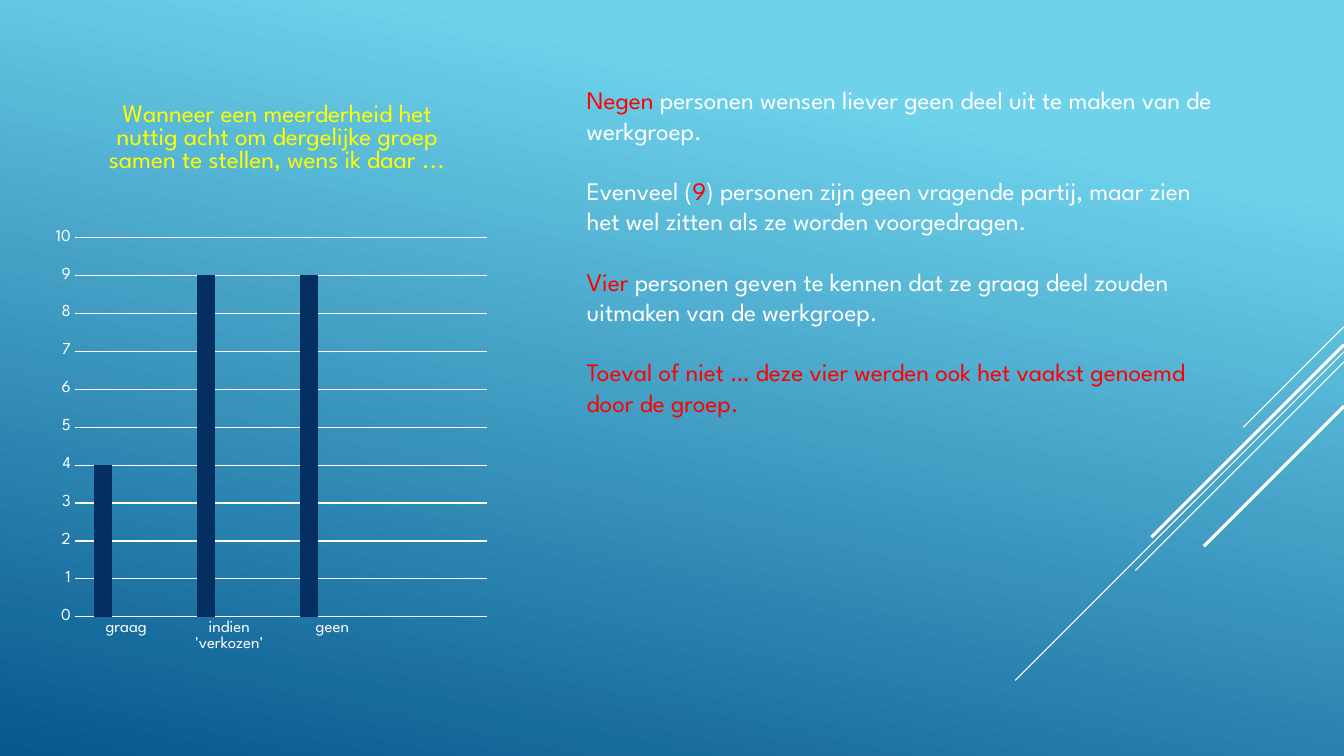
import dataclasses

import lxml.etree
import pptx
import pptx.chart.data
import pptx.dml.color
import pptx.enum.chart
import pptx.enum.text
import pptx.oxml
import pptx.oxml.ns
import pptx.util

Inches = pptx.util.Inches
Pt = pptx.util.Pt
qn = pptx.oxml.ns.qn


@dataclasses.dataclass(frozen=True)
class Theme:
    font: str = "League Spartan"
    sky: str = "6ED2EB"
    deep: str = "06588E"
    white: str = "FFFFFF"
    title: str = "FFFF00"
    accent: str = "FF0000"
    bars: tuple = ("052F61", "A50E82", "14967C")
    body_size: float = 18
    title_size: float = 18
    axis_size: float = 12
    thin: float = 0.75
    thick: float = 2.25


THEME = Theme()
SLIDE_WIDTH, SLIDE_HEIGHT = 13.33, 7.5
# height at the right edge, horizontal reach, line width
RAYS = [
    (3.24, 1.0, THEME.thin),
    (3.49, 3.26, THEME.thin),
    (3.59, 2.07, THEME.thin),
    (3.42, 1.91, THEME.thick),
    (4.03, 1.39, THEME.thick),
]
QUESTION = ("Wanneer een meerderheid het nuttig acht om dergelijke groep "
            "samen te stellen, wens ik daar ...")
ANSWERS = {"graag": 4, "indien 'verkozen'": 9, "geen": 9, "": None}
# each paragraph is a list of (text, is highlighted)
FINDINGS = [
    [("Negen", True),
     (" personen wensen liever geen deel uit te maken van de werkgroep.", False)],
    [("Evenveel (", False), ("9", True),
     (") personen zijn geen vragende partij, maar zien het wel zitten "
      "als ze worden voorgedragen.", False)],
    [("Vier", True),
     (" personen geven te kennen dat ze graag deel zouden uitmaken "
      "van de werkgroep.", False)],
    [("Toeval of niet … deze vier werden ook het vaakst genoemd "
      "door de groep.", True)],
]


def rgb(color):
    return pptx.dml.color.RGBColor.from_string(color)


def style_font(font, size, color):
    font.name = THEME.font
    font.size = Pt(size)
    font.bold = False
    font.color.rgb = rgb(color)


def style_line(line, width=THEME.thin):
    line.color.rgb = rgb(THEME.white)
    line.width = Pt(width)


def paint_background(slide):
    fill = slide.background.fill
    fill.gradient()
    # gradient_angle runs counter-clockwise
    fill.gradient_angle = 360 - 102
    for stop, position, color in zip(fill.gradient_stops, (0.19, 1),
                                     (THEME.sky, THEME.deep)):
        stop.position = position
        stop.color.rgb = rgb(color)


def draw_rays(slide, right):
    """Draw 45-degree lines running down and left from the right edge."""
    for top, reach, width in RAYS:
        ray = slide.shapes.add_connector(
            pptx.enum.shapes.MSO_CONNECTOR.STRAIGHT,
            Inches(right), Inches(top), Inches(right - reach), Inches(top + reach))
        style_line(ray.line, width)
        lxml.etree.SubElement(ray._element.spPr, qn("a:effectLst"))


def set_layout(parent, **settings):
    """Give a chart title or plot area a manual layout."""
    for old in parent.findall(qn("c:layout")):
        parent.remove(old)
    layout = lxml.etree.Element(qn("c:layout"))
    manual = lxml.etree.SubElement(layout, qn("c:manualLayout"))
    for name, value in settings.items():
        lxml.etree.SubElement(manual, qn(f"c:{name}")).set("val", str(value))
    text = parent.find(qn("c:tx"))
    parent.insert(0 if text is None else 1, layout)


def add_answer_chart(slide, left, top, width, height):
    chart_data = pptx.chart.data.CategoryChartData()
    chart_data.categories = list(ANSWERS)
    chart_data.add_series("Series 1", list(ANSWERS.values()))
    for name in ("Series 2", "Series 3"):
        chart_data.add_series(name, [None] * len(ANSWERS))
    chart = slide.shapes.add_chart(
        pptx.enum.chart.XL_CHART_TYPE.COLUMN_CLUSTERED,
        Inches(left), Inches(top), Inches(width), Inches(height), chart_data).chart
    style_font(chart.font, THEME.axis_size, THEME.white)
    chart.has_legend = False

    chart.has_title = True
    question = chart.chart_title.text_frame
    question.text = QUESTION
    style_font(question.paragraphs[0].runs[0].font, THEME.title_size, THEME.title)
    chart.chart_title.include_in_layout = False

    plot = chart.plots[0]
    plot.gap_width = 219
    plot.overlap = -27
    plot.vary_by_categories = False
    for series, color in zip(plot.series, THEME.bars):
        series.format.fill.solid()
        series.format.fill.fore_color.rgb = rgb(color)
    set_layout(chart._chartSpace.chart.plotArea, layoutTarget="inner",
               xMode="edge", yMode="edge", x=0.078, y=0.264, w=0.859, h=0.635)

    for axis in (chart.category_axis, chart.value_axis):
        axis.major_tick_mark = pptx.enum.chart.XL_TICK_MARK.NONE
        axis.minor_tick_mark = pptx.enum.chart.XL_TICK_MARK.NONE
        style_font(axis.tick_labels.font, THEME.axis_size, THEME.white)
    style_line(chart.category_axis.format.line)
    scale = chart.value_axis
    scale.minimum_scale, scale.maximum_scale, scale.major_unit = 0, 10, 1
    scale.format.line.fill.background()
    style_line(scale.major_gridlines.format.line)


def add_findings(slide, left, top, width, height):
    frame = slide.shapes.add_textbox(
        Inches(left), Inches(top), Inches(width), Inches(height)).text_frame
    frame.word_wrap = True
    frame.auto_size = pptx.enum.text.MSO_AUTO_SIZE.SHAPE_TO_FIT_TEXT
    line_height = Pt(THEME.body_size * 1.2)
    for index, finding in enumerate(FINDINGS):
        paragraph = frame.paragraphs[0] if index == 0 else frame.add_paragraph()
        paragraph.line_spacing = line_height
        paragraph.space_before = line_height if index else 0
        for text, highlighted in finding:
            run = paragraph.add_run()
            run.text = text
            style_font(run.font, THEME.body_size,
                       THEME.accent if highlighted else THEME.white)


def main():
    presentation = pptx.Presentation()
    presentation.slide_width = Inches(SLIDE_WIDTH)
    presentation.slide_height = Inches(SLIDE_HEIGHT)
    slide = presentation.slides.add_slide(presentation.slide_layouts[6])
    paint_background(slide)
    draw_rays(slide, SLIDE_WIDTH)
    add_answer_chart(slide, 0.37, 0.79, 4.76, 5.93)
    add_findings(slide, 5.72, 0.79, 6.56, 3.74)
    presentation.save("out.pptx")


if __name__ == "__main__":
    main()
